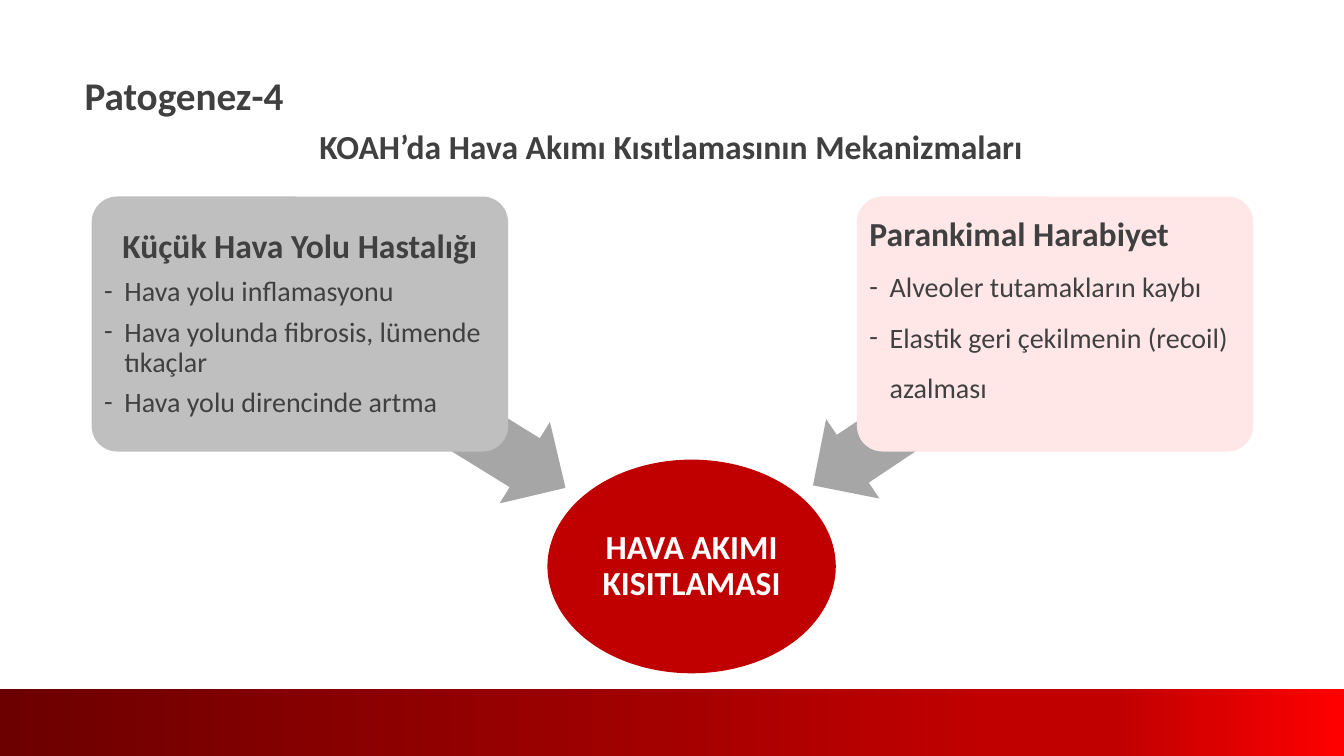
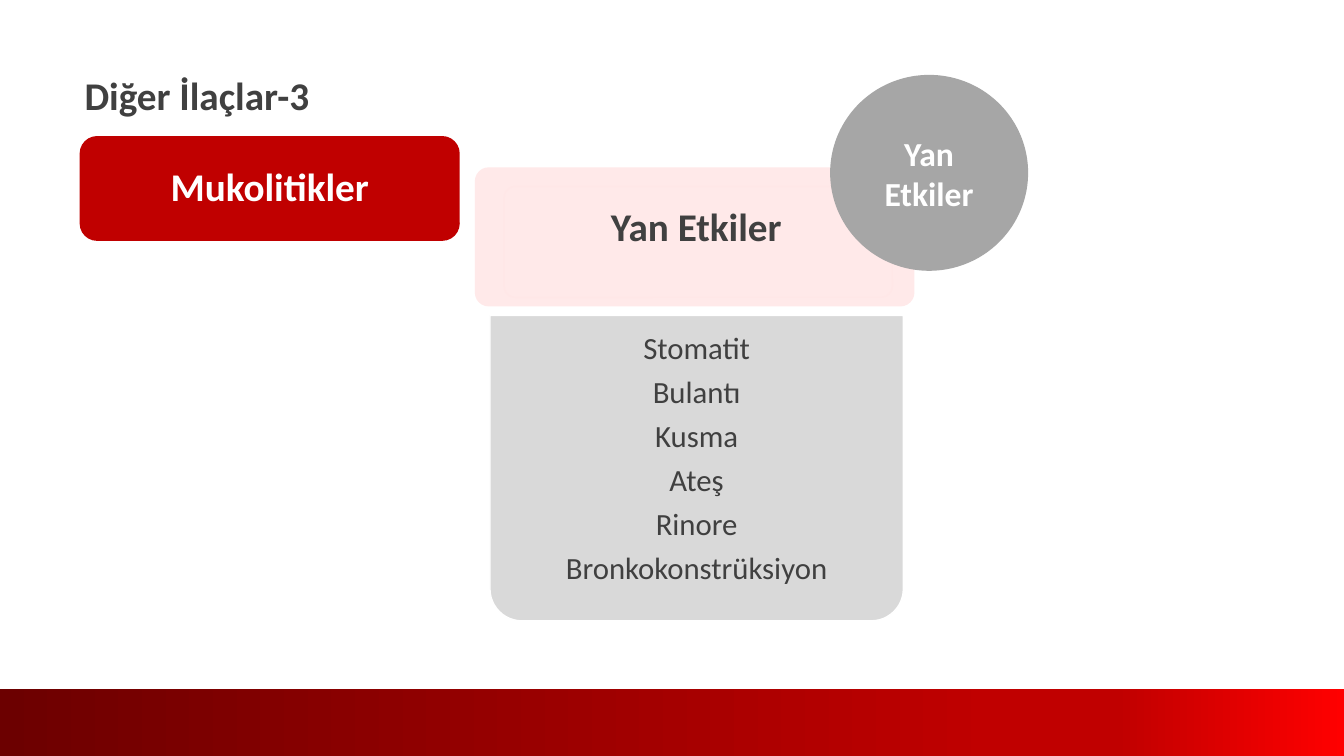
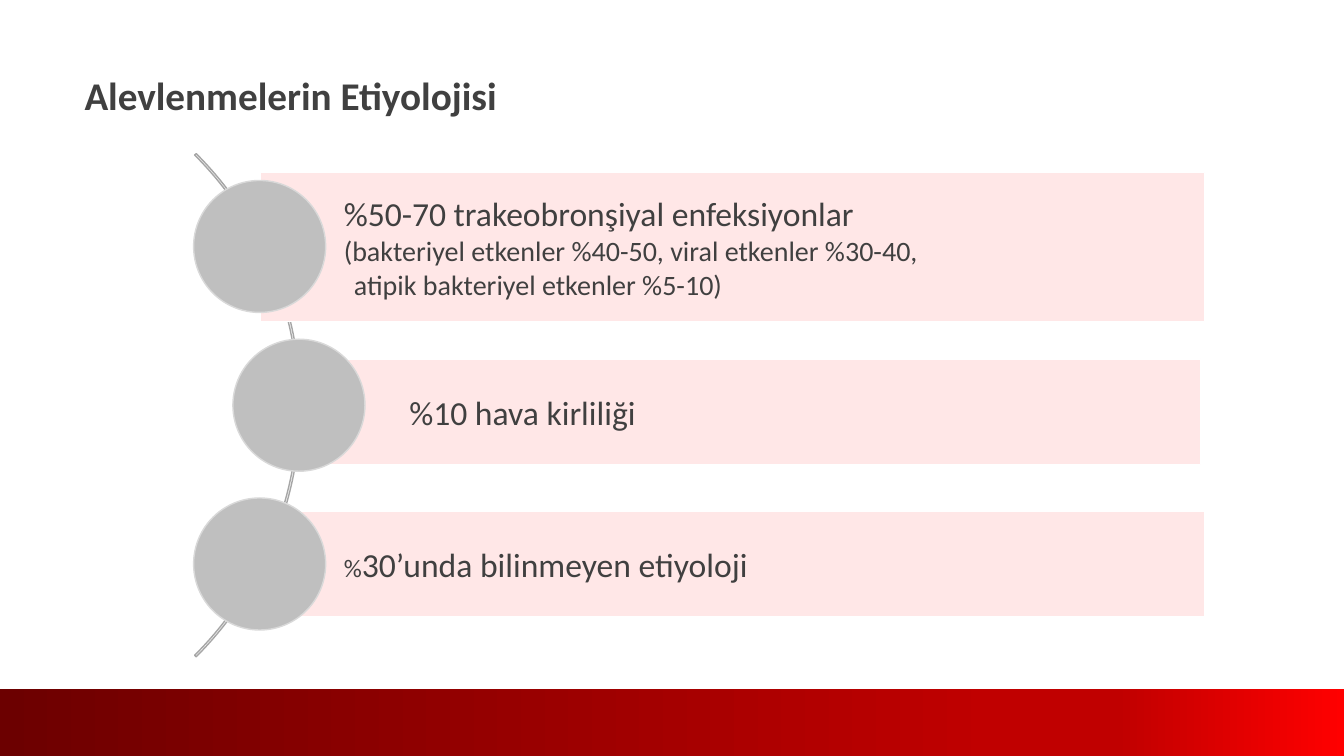
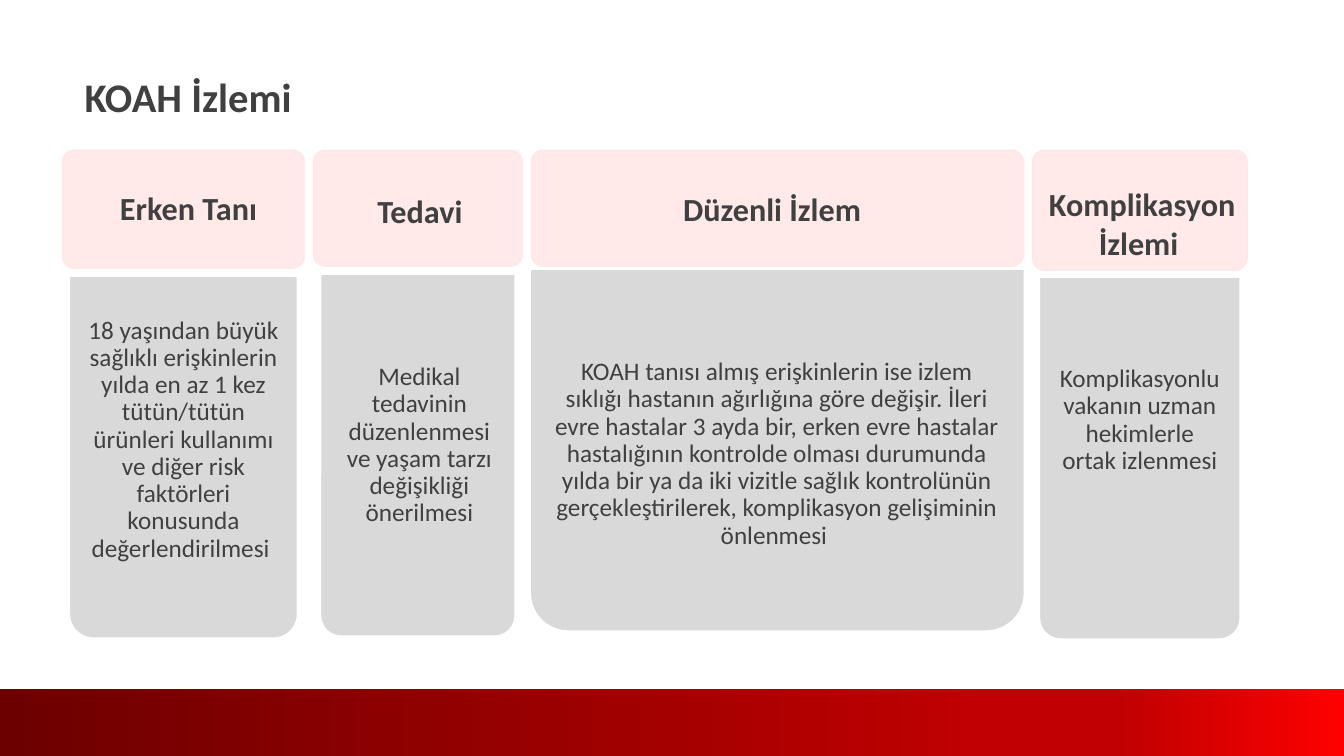
"""Build four slides on the mechanisms, treatment and follow-up of COPD."""
from copy import deepcopy

from lxml.etree import SubElement
from pptx import Presentation
from pptx.dml.color import RGBColor
from pptx.enum.shapes import MSO_SHAPE as Form
from pptx.enum.text import MSO_ANCHOR as Anchor, PP_ALIGN as Align
from pptx.oxml.ns import qn
from pptx.util import Inches, Pt

WIDTH, HEIGHT = 13.33, 7.5
FONT = "Calibri"
INK = RGBColor(0x40, 0x40, 0x40)
WHITE = RGBColor(0xFF, 0xFF, 0xFF)
RED = RGBColor(0xC0, 0x00, 0x00)
DARK_RED = RGBColor(0x6C, 0x00, 0x00)
BRIGHT_RED = RGBColor(0xFF, 0x00, 0x00)
PINK = RGBColor(0xFF, 0xE7, 0xE7)
DARK_GREY = RGBColor(0xA6, 0xA6, 0xA6)
GREY = RGBColor(0xBF, 0xBF, 0xBF)
PALE_GREY = RGBColor(0xD9, 0xD9, 0xD9)
BAND_STOPS = [(0, DARK_RED), (0.74, RED), (0.83, RED), (1, BRIGHT_RED)]

PADDING = (0.1, 0.05, 0.1, 0.05)
HEADING = {"size": 24, "bold": True}
LARGE = {"size": 28, "bold": True}
TIGHT = {"spacing": 0.9, "after": 0.35}
LOOSE = {"spacing": 1.5}
DASH = {"size": 20, "bullet": "-", "indent": 0.2}

MECHANISMS = [
    {"box": (0.91, 1.95, 4.13, 2.53), "fill": GREY, "padding": (0.05,) * 4,
     "arrow": (2.74, 3.55, 3.1, 0.95), "turn": 211.7,
     "lines": [{"text": "Küçük Hava Yolu Hastalığı", "align": Align.CENTER, **HEADING, **TIGHT}]
     + [{"text": text, **DASH, **TIGHT} for text in (
         "Hava yolu inflamasyonu", "Hava yolunda fibrosis, lümende tıkaçlar",
         "Hava yolu direncinde artma")]},
    {"box": (8.5, 1.95, 3.93, 2.53), "fill": PINK, "padding": (0.05, 0.05, 0.05, 0.56),
     "arrow": (7.82, 3.54, 2.88, 0.95), "turn": 326.2,
     "lines": [{"text": "Parankimal Harabiyet", **HEADING, **LOOSE}]
     + [{"text": text, **DASH, **LOOSE} for text in (
         "Alveoler tutamakların kaybı", "Elastik geri çekilmenin (recoil) azalması")]},
]

SIDE_EFFECTS = ["Stomatit", "Bulantı", "Kusma", "Ateş", "Rinore", "Bronkokonstrüksiyon"]

CAUSES = [
    {"bar": (2.58, 1.71, 9.37, 1.48), "circle": 1.92, "lines": [
        {"text": "%50-70 trakeobronşiyal enfeksiyonlar", "size": 24},
        {"text": "(bakteriyel etkenler %40-50, viral etkenler %30-40,\v"
                 "atipik bakteriyel etkenler %5-10)", "size": 20, "indent": 0.1}]},
    {"bar": (3.23, 3.56, 8.68, 1.05), "circle": 2.31, "lines": [
        {"text": "%10 hava kirliliği", "size": 24}]},
    {"bar": (2.58, 5.07, 9.37, 1.05), "circle": 1.92, "lines": [
        {"text": "%", "size": 18, "tail": "30’unda bilinmeyen etiyoloji", "tail_size": 24}]},
]

FOLLOW_UP = [
    {"name": "Erken Tanı", "width": 2.4, "height": 1.17, "margin": 0.07, "top": 2.74,
     "name_padding": (0.2, 0.05, 0.1, 0.07), "padding": (0.11, 0.41, 0.11, 0.11),
     "text": "18 yaşından büyük sağlıklı erişkinlerin yılda en az 1 kez tütün/tütün ürünleri "
             "kullanımı ve diğer risk faktörleri konusunda değerlendirilmesi "},
    {"name": "Tedavi", "width": 2.07, "height": 1.15, "margin": 0.07, "top": 2.72,
     "name_padding": (0.14, 0.09, 0.1, 0.05), "padding": (0.14, 0.89, 0.11, 0.14),
     "text": "Medikal tedavinin düzenlenmesi ve yaşam tarzı değişikliği önerilmesi"},
    {"name": "Düzenli İzlem", "width": 4.88, "height": 1.15, "margin": -0.01, "top": 2.67,
     "name_padding": (0.05, 0.06, 0.15, 0.05), "padding": (0.12, 0.89, 0.13, 0.14),
     "text": "KOAH tanısı almış erişkinlerin ise izlem sıklığı hastanın ağırlığına göre değişir. "
             "İleri evre hastalar 3 ayda bir, erken evre hastalar hastalığının kontrolde olması "
             "durumunda yılda bir ya da iki vizitle sağlık kontrolünün gerçekleştirilerek, "
             "komplikasyon gelişiminin önlenmesi "},
    {"name": "Komplikasyon İzlemi ", "width": 2.13, "height": 1.19, "margin": 0.07, "top": 2.75,
     "name_padding": (0.07, 0.28, 0.02, 0.02), "padding": (0.14, 0.88, 0.14, 0.14),
     "text": "Komplikasyonlu vakanın uzman hekimlerle ortak izlenmesi "},
]


def style_span(span, size, bold, color):
    """Apply the deck's font to one run."""
    for name, value in {"name": FONT, "size": Pt(size), "bold": bold}.items():
        setattr(span.font, name, value)
    span.font.color.rgb = color


def write(box, lines, padding=PADDING, anchor=Anchor.MIDDLE, align=Align.LEFT, color=INK):
    """Fill a shape's text frame with formatted paragraphs."""
    frame = box.text_frame
    sides = dict(zip(("margin_left", "margin_top", "margin_right", "margin_bottom"),
                     map(Inches, padding)))
    for name, value in {"word_wrap": True, "vertical_anchor": anchor, **sides}.items():
        setattr(frame, name, value)
    for index, line in enumerate(lines):
        para = frame.add_paragraph() if index else frame.paragraphs[0]
        size, bold = line["size"], line.get("bold", False)
        layout = {"alignment": line.get("align", align),
                  "line_spacing": line.get("spacing", 1.0),
                  "space_after": Pt(round(size * line.get("after", 0), 1))}
        for name, value in layout.items():
            setattr(para, name, value)
        if "indent" in line:
            hang = Inches(line["indent"])
            properties = para._p.get_or_add_pPr()
            properties.set("marL", str(hang))
            properties.set("indent", str(-hang))
            if "bullet" in line:
                SubElement(properties, qn("a:buFont"), typeface=FONT)
                SubElement(properties, qn("a:buChar"), char=line["bullet"])
        para.text = line["text"]
        for span in para.runs:
            style_span(span, size, bold, color)
        if "tail" in line:
            span = para.add_run()
            span.text = line["tail"]
            style_span(span, line["tail_size"], bold, color)


def add_text(page, at, lines, **layout):
    """Add a text box."""
    write(page.shapes.add_textbox(*map(Inches, at)), lines, **layout)


def add_form(page, form, at, fill=None, line=None, adjust=(), turn=0, opacity=None):
    """Add a flat preset shape."""
    shape = page.shapes.add_shape(form, *map(Inches, at))
    shape.shadow.inherit = False
    shape.rotation = turn
    for index, value in enumerate(adjust):
        shape.adjustments[index] = value
    if fill is None:
        shape.fill.background()
    else:
        shape.fill.solid()
        shape.fill.fore_color.rgb = fill
    if line is None:
        shape.line.fill.background()
    else:
        shape.line.color.rgb = line
        shape.line.width = Pt(1)
    if opacity:
        for tint in shape.element.spPr.iter(qn("a:srgbClr")):
            SubElement(tint, qn("a:alpha"), val=str(int(opacity * 100000)))
    return shape


def add_header(page, at, line=None):
    """Add a translucent pink heading card."""
    return add_form(page, Form.ROUNDED_RECTANGLE, at, PINK, line, (0.1,), opacity=0.9)


def add_body(page, at):
    """Add a grey card with rounded lower corners."""
    return add_form(page, Form.ROUND_2_SAME_RECTANGLE, at, PALE_GREY, WHITE, (0, 0.105))


def add_band(page):
    """Add the red gradient band along the foot."""
    band = add_form(page, Form.RECTANGLE, (0, 6.84, WIDTH, HEIGHT - 6.84))
    band.fill.gradient()
    band.fill.gradient_angle = 0
    stop_list = band.element.spPr.find(qn("a:gradFill")).find(qn("a:gsLst"))
    for _ in BAND_STOPS[2:]:
        stop_list.append(deepcopy(stop_list[0]))
    for stop, (position, color) in zip(band.fill.gradient_stops, BAND_STOPS):
        stop.position = position
        stop.color.rgb = color


def draw_mechanisms(page):
    """Two causes pointing at one result."""
    add_text(page, (3.07, 1, 8.16, 0.64), [
        {"text": "KOAH’da Hava Akımı Kısıtlamasının Mekanizmaları", **HEADING, **LOOSE}],
        anchor=Anchor.TOP)
    result = add_form(page, Form.OVAL, (5.43, 4.56, 2.86, 2.12), RED)
    write(result, [{"text": "HAVA AKIMI KISITLAMASI", **HEADING, "spacing": 0.9}],
          (0.03,) * 4, align=Align.CENTER, color=WHITE)
    for cause in MECHANISMS:
        add_form(page, Form.LEFT_ARROW, cause["arrow"], DARK_GREY,
                 adjust=(0.6, 0.5), turn=cause["turn"])
        card = add_form(page, Form.ROUNDED_RECTANGLE, cause["box"], cause["fill"], adjust=(0.1,))
        write(card, cause["lines"], cause["padding"])


def draw_side_effects(page):
    """A drug group and the list of its side effects."""
    header = add_header(page, (4.71, 1.66, 4.36, 1.38))
    write(header, [{"text": "Yan Etkiler", **LARGE}], (0.13, 0.05, 0.1, 0.27), align=Align.CENTER)
    add_form(page, Form.ROUNDED_RECTANGLE, (5, 1.85, 3.85, 1.1), line=PINK, adjust=(0.1,))
    body = add_body(page, (4.86, 3.13, 4.1, 3.03))
    write(body, [{"text": effect, "size": 22, **TIGHT} for effect in SIDE_EFFECTS],
          (0.17,) * 4, Anchor.TOP, Align.CENTER)
    badge = add_form(page, Form.OVAL, (8.24, 0.75, 1.95, 1.93), DARK_GREY, DARK_GREY)
    write(badge, [{"text": "Yan Etkiler", **HEADING}], align=Align.CENTER, color=WHITE)
    group = add_form(page, Form.ROUNDED_RECTANGLE, (0.79, 1.35, 3.77, 1.04), RED)
    write(group, [{"text": "Mukolitikler", **LARGE, "spacing": 0.9}],
          align=Align.CENTER, color=WHITE)


def draw_causes(page):
    """Three bars hung on an arc."""
    add_form(page, Form.BLOCK_ARC, (-4.08, 0.49, 7.06, 7.06), line=DARK_GREY,
             adjust=(189, 27, 0.003))
    diameter, first, last = 1.31, 1.79, 4.94
    step = (last - first) / (len(CAUSES) - 1)
    for row, cause in enumerate(CAUSES):
        bar = add_form(page, Form.RECTANGLE, cause["bar"], PINK, WHITE)
        write(bar, cause["lines"], (0.83, 0.07, 0.07, 0.07))
        add_form(page, Form.OVAL, (cause["circle"], first + row * step, diameter, diameter),
                 GREY, PALE_GREY)


def draw_follow_up(page):
    """Four columns, each a heading card over a body card."""
    left, gap, top, body_height = 0.62, 0.09, 1.49, 3.59
    for column in FOLLOW_UP:
        width, margin = column["width"], column["margin"]
        header = add_header(page, (left, top, width, column["height"]), PINK)
        write(header, [{"text": column["name"], "size": 23, "bold": True}],
              column["name_padding"], align=Align.CENTER)
        body = add_body(page, (left + margin, column["top"], width - 2 * margin, body_height))
        write(body, [{"text": column["text"], "size": 18, "spacing": 0.9}],
              column["padding"], Anchor.TOP, Align.CENTER)
        left += width + gap


SLIDES = [
    ("Patogenez-4", 28, draw_mechanisms),
    ("Diğer İlaçlar-3", 28, draw_side_effects),
    ("Alevlenmelerin Etiyolojisi", 28, draw_causes),
    ("KOAH İzlemi", 29, draw_follow_up),
]


def main():
    """Assemble and save the deck."""
    deck = Presentation()
    deck.slide_width, deck.slide_height = Inches(WIDTH), Inches(HEIGHT)
    for title, size, draw in SLIDES:
        page = deck.slides.add_slide(deck.slide_layouts[6])
        add_text(page, (0.74, 0.66, 10, 0.57), [{"text": title, "size": size, "bold": True}],
                 anchor=Anchor.TOP)
        draw(page)
        add_band(page)
    deck.save("out.pptx")


if __name__ == "__main__":
    main()
